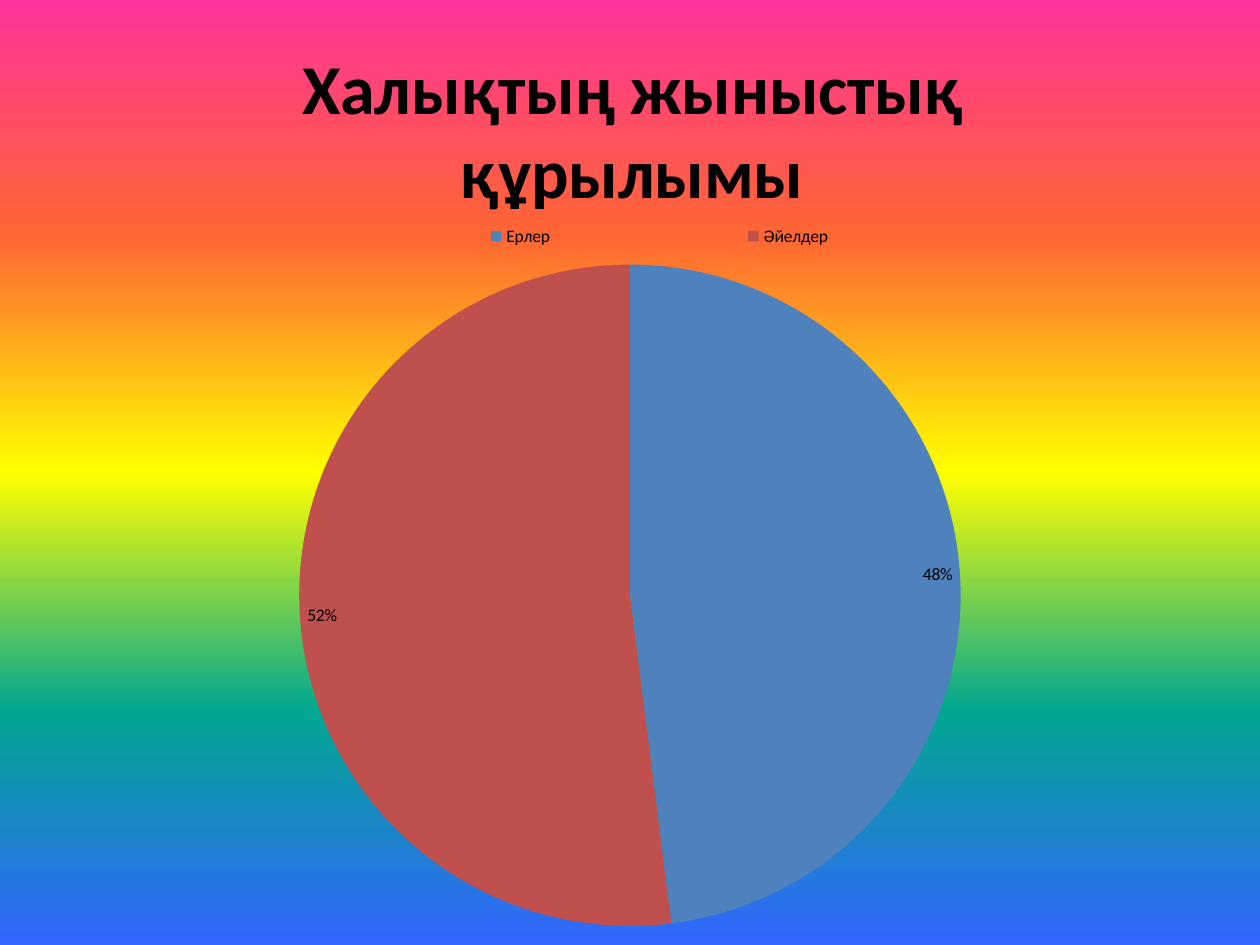
import pptx
import pptx.chart.data
import pptx.dml.color
import pptx.enum.chart
import pptx.oxml
import pptx.oxml.ns
import pptx.util
from pptx.util import Inches

COLORS = {
    "pink": "FF3399", "orange": "FF6633", "yellow": "FFFF00", "teal": "01A78F",
    "sky": "3366FF", "men": "4F81BD", "women": "C0504D", "text": "000000",
}
BACKGROUND = ["pink", "orange", "yellow", "teal", "sky"]
SHARES = [("Ерлер ", 48, "men"), ("Әйелдер ", 52, "women")]


def color(name):
    """Return the named colour."""
    return pptx.dml.color.RGBColor.from_string(COLORS[name])


def style_font(font, size, bold=False):
    """Set the common typeface with a size and weight."""
    font.name = "Calibri"
    font.size = pptx.util.Pt(size)
    font.bold = bold
    font.color.rgb = color("text")


def paint_background(page, names):
    """Fill the page with evenly spaced colours from top to bottom."""
    fill = page.background.fill
    fill.gradient()
    fill.gradient_angle = 270
    stops = page.background._cSld.find(".//" + pptx.oxml.ns.qn("a:gsLst"))
    for stop in list(stops):
        stops.remove(stop)
    for index, name in enumerate(names):
        position = index * 100000 // (len(names) - 1)
        stops.append(pptx.oxml.parse_xml(
            f'<a:gs {pptx.oxml.ns.nsdecls("a")} pos="{position}">'
            f'<a:srgbClr val="{COLORS[name]}"/></a:gs>'))


def place(element, left, top, size=None, after=None, inner=False):
    """Fix a chart part at fractions of the chart's size."""
    for old in element.findall(pptx.oxml.ns.qn("c:layout")):
        element.remove(old)
    target = '<c:layoutTarget val="inner"/>' if inner else ""
    extent = f'<c:w val="{size[0]}"/><c:h val="{size[1]}"/>' if size else ""
    layout = pptx.oxml.parse_xml(
        f'<c:layout {pptx.oxml.ns.nsdecls("c")}><c:manualLayout>{target}'
        '<c:xMode val="edge"/><c:yMode val="edge"/>'
        f'<c:x val="{left}"/><c:y val="{top}"/>{extent}</c:manualLayout></c:layout>')
    if after:
        element.find(pptx.oxml.ns.qn(after)).addnext(layout)
    else:
        element.insert(0, layout)


def add_title(chart, text):
    """Give the chart a large bold title."""
    chart.has_title = True
    title = chart.chart_title
    span = title.text_frame.paragraphs[0].add_run()
    span.text = text
    style_font(span.font, 40, True)
    title.include_in_layout = False
    place(title._element, 0.23, 0.03, after="c:tx")


def add_legend(chart):
    """Show the legend above the pie."""
    chart.has_legend = True
    legend = chart.legend
    legend.position = pptx.enum.chart.XL_LEGEND_POSITION.TOP
    legend.include_in_layout = False
    style_font(legend.font, 10)
    place(legend._element, 0.24, 0.23, (0.57, 0.04), after="c:legendPos")


def add_pie(page, shares):
    """Add a pie chart of the shares that covers the page."""
    data = pptx.chart.data.CategoryChartData(number_format="#,##0")
    data.categories = [label for label, _, _ in shares]
    data.add_series("Series 1", [value for _, value, _ in shares])
    chart = page.shapes.add_chart(
        pptx.enum.chart.XL_CHART_TYPE.PIE, 0, 0, Inches(10), Inches(7.5), data).chart
    style_font(chart.font, 10)
    plot = chart.plots[0]
    plot.vary_by_categories = True
    for index, (_, _, name) in enumerate(shares):
        fill = plot.series[0].points[index].format.fill
        fill.solid()
        fill.fore_color.rgb = color(name)
    plot.has_data_labels = True
    labels = plot.data_labels
    labels.show_value = False
    labels.show_percentage = True
    labels.number_format = "0%"
    labels.number_format_is_linked = False
    labels.position = pptx.enum.chart.XL_LABEL_POSITION.INSIDE_END
    style_font(labels.font, 10)
    place(chart._chartSpace.chart.plotArea, 0.23, 0.28, (0.54, 0.7), inner=True)
    return chart


def main():
    """Build and save the deck."""
    deck = pptx.Presentation()
    deck.slide_width, deck.slide_height = Inches(10), Inches(7.5)
    page = deck.slides.add_slide(deck.slide_layouts[6])
    paint_background(page, BACKGROUND)
    chart = add_pie(page, SHARES)
    add_title(chart, "Халықтың жыныстық құрылымы")
    add_legend(chart)
    deck.save("out.pptx")


if __name__ == "__main__":
    main()
